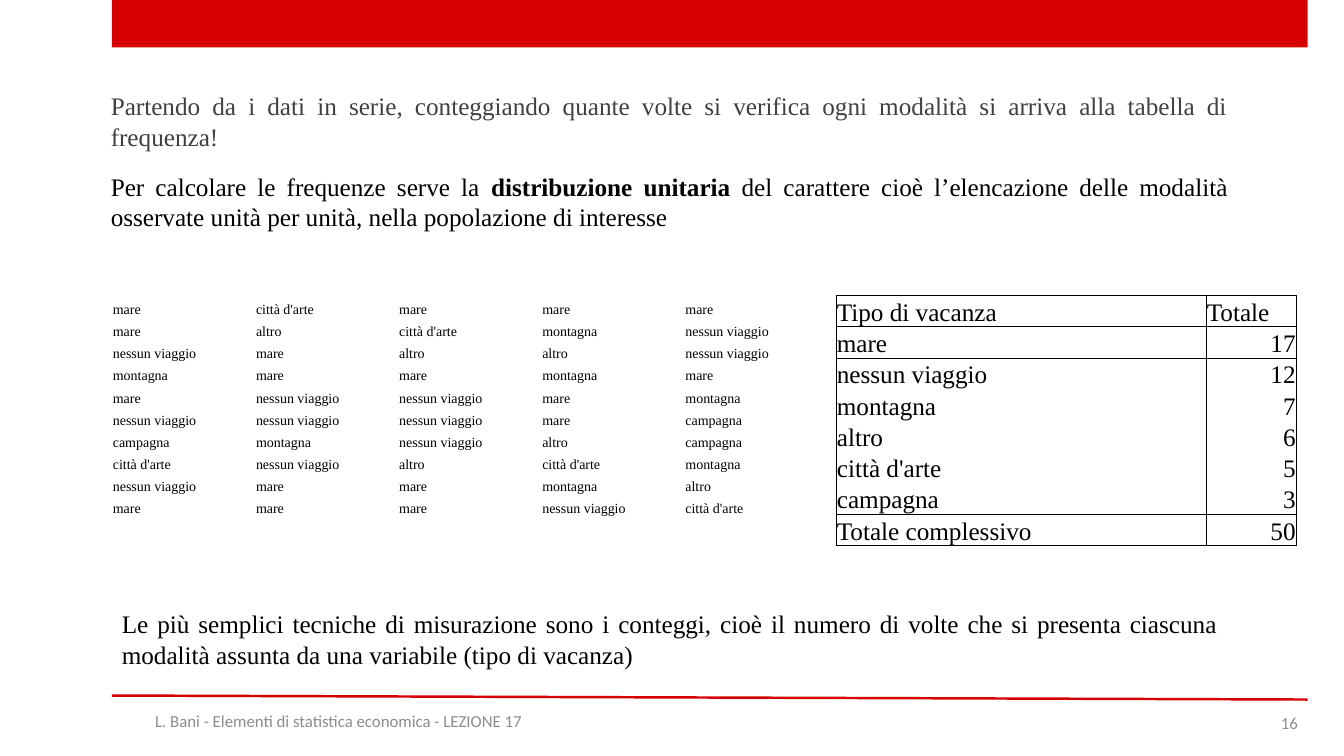
import lxml.etree
import pptx
import pptx.dml.color
import pptx.enum.shapes
import pptx.enum.text
import pptx.oxml.ns
import pptx.util

Inches = pptx.util.Inches
Pt = pptx.util.Pt
ALIGN = pptx.enum.text.PP_ALIGN
ANCHOR = pptx.enum.text.MSO_ANCHOR
qn = pptx.oxml.ns.qn

COLOURS = {"red": "D60000", "black": "000000", "dark": "404040", "grey": "8C8C8C"}
NO_STYLE_NO_GRID = "{2D5ABB26-0587-4C30-8999-92F81FD0307C}"
NO_TRIP = "nessun viaggio"

HOLIDAYS = [
    ["mare", "città d'arte", "mare", "mare", "mare"],
    ["mare", "altro", "città d'arte", "montagna", NO_TRIP],
    [NO_TRIP, "mare", "altro", "altro", NO_TRIP],
    ["montagna", "mare", "mare", "montagna", "mare"],
    ["mare", NO_TRIP, NO_TRIP, "mare", "montagna"],
    [NO_TRIP, NO_TRIP, NO_TRIP, "mare", "campagna"],
    ["campagna", "montagna", NO_TRIP, "altro", "campagna"],
    ["città d'arte", NO_TRIP, "altro", "città d'arte", "montagna"],
    [NO_TRIP, "mare", "mare", "montagna", "altro"],
    ["mare", "mare", "mare", NO_TRIP, "città d'arte"],
]
FREQUENCIES = [
    ["Tipo di vacanza", "Totale"],
    ["mare", "17"],
    [NO_TRIP, "12"],
    ["montagna", "7"],
    ["altro", "6"],
    ["città d'arte", "5"],
    ["campagna", "3"],
    ["Totale complessivo", "50"],
]


def colour(name):
    return pptx.dml.color.RGBColor.from_string(COLOURS[name])


def write_text(frame, text, size=18, font="Times New Roman", color="black",
               align=ALIGN.LEFT, bold_words=""):
    """Fill the first paragraph of a frame, with bold_words set in bold."""
    paragraph = frame.paragraphs[0]
    paragraph.alignment = align
    if not text:
        # An empty cell keeps its row low only if its end mark is small too.
        lxml.etree.SubElement(paragraph._p, qn("a:endParaRPr"), sz=str(size * 100))
    parts = text.partition(bold_words) if bold_words else [text]
    for part in filter(None, parts):
        run = paragraph.add_run()
        run.text = part
        run.font.name = font
        run.font.size = Pt(size)
        run.font.bold = part == bold_words
        run.font.color.rgb = colour(color)


def add_border(cell, side):
    line = lxml.etree.SubElement(cell._tc.get_or_add_tcPr(), qn(f"a:ln{side}"),
                                 w=str(Pt(0.5)))
    fill = lxml.etree.SubElement(line, qn("a:solidFill"))
    lxml.etree.SubElement(fill, qn("a:srgbClr"), val=COLOURS["black"])


class SlideBuilder:
    def __init__(self, slide):
        self.slide = slide

    def bar(self, left, top, width, height):
        shape = self.slide.shapes.add_shape(
            pptx.enum.shapes.MSO_SHAPE.RECTANGLE,
            Inches(left), Inches(top), Inches(width), Inches(height))
        shape.shadow.inherit = False
        shape.fill.solid()
        shape.fill.fore_color.rgb = colour("red")
        shape.line.fill.background()

    def line(self, x1, y1, x2, y2):
        connector = self.slide.shapes.add_connector(
            pptx.enum.shapes.MSO_CONNECTOR.STRAIGHT,
            Inches(x1), Inches(y1), Inches(x2), Inches(y2))
        connector.line.color.rgb = colour("red")
        connector.line.width = Pt(1.75)
        lxml.etree.SubElement(connector._element.spPr, qn("a:effectLst"))

    def text_box(self, left, top, width, height, text, **style):
        box = self.slide.shapes.add_textbox(
            Inches(left), Inches(top), Inches(width), Inches(height))
        box.text_frame.word_wrap = True
        write_text(box.text_frame, text, **style)
        return box.text_frame

    def body(self, left, top, width, text, **style):
        frame = self.text_box(left, top, width, 0.71, text,
                              align=ALIGN.JUSTIFY, **style)
        frame.auto_size = pptx.enum.text.MSO_AUTO_SIZE.SHAPE_TO_FIT_TEXT

    def footer(self, left, top, width, text, align):
        frame = self.text_box(left, top, width, 0.4, text, size=12,
                              font="Calibri", color="grey", align=align)
        frame.vertical_anchor = ANCHOR.MIDDLE

    def table(self, left, top, column_widths, row_height, row_count):
        graphic = self.slide.shapes.add_table(
            row_count, len(column_widths), Inches(left), Inches(top),
            Inches(sum(column_widths)), Inches(row_height * row_count))
        table = graphic.table
        table.first_row = table.horz_banding = False
        table._tbl.tblPr.find(qn("a:tableStyleId")).text = NO_STYLE_NO_GRID
        for column, width in zip(table.columns, column_widths):
            column.width = Inches(width)
        for row in table.rows:
            row.height = Inches(row_height)
        return table

    def cell(self, cell, text, borders="", **style):
        cell.margin_left = cell.margin_right = cell.margin_top = Inches(0.01)
        cell.margin_bottom = 0
        cell.vertical_anchor = ANCHOR.BOTTOM
        for side in borders:
            add_border(cell, side)
        cell.fill.background()
        write_text(cell.text_frame, text, **style)

    def holiday_table(self):
        """List the answers in columns parted by narrow empty ones."""
        widths = [1.18, 0.24] * 4 + [1.18]
        table = self.table(1.11, 2.93, widths, 0.22, len(HOLIDAYS))
        for r, answers in enumerate(HOLIDAYS):
            for c in range(len(widths)):
                answer = "" if c % 2 else answers[c // 2]
                self.cell(table.cell(r, c), answer, size=10)
            for c in range(0, len(widths) - 1, 2):
                if answers[c // 2] == NO_TRIP:
                    table.cell(r, c).merge(table.cell(r, c + 1))

    def frequency_table(self):
        """Box the header, the block of counts and the total."""
        last = len(FREQUENCIES) - 1
        table = self.table(8.29, 2.93, [3.67, 0.9], 0.31, len(FREQUENCIES))
        for r, values in enumerate(FREQUENCIES):
            borders = "LR"
            borders += "T" if r in (0, 1, last) else ""
            borders += "B" if r in (0, last - 1, last) else ""
            for c, value in enumerate(values):
                align = ALIGN.RIGHT if value.isdigit() else ALIGN.LEFT
                self.cell(table.cell(r, c), value, borders, align=align)


def main():
    presentation = pptx.Presentation()
    presentation.slide_width = Inches(13.33)
    presentation.slide_height = Inches(7.5)
    blank_layout = presentation.slide_layouts[6]
    builder = SlideBuilder(presentation.slides.add_slide(blank_layout))

    builder.bar(1.11, 0, 11.86, 0.47)
    builder.line(1.11, 6.9, 12.97, 6.94)
    builder.footer(1.11, 6.95, 4.5,
                   "L. Bani - Elementi di statistica economica - LEZIONE 17",
                   ALIGN.CENTER)
    builder.footer(9.97, 6.97, 3, "16", ALIGN.RIGHT)
    builder.body(1, 0.85, 11.28,
                 "Partendo da i dati in serie, conteggiando quante volte si verifica "
                 "ogni modalità si arriva alla tabella di frequenza!", color="dark")
    builder.holiday_table()
    builder.body(1, 1.65, 11.28,
                 "Per calcolare le frequenze serve la distribuzione unitaria del "
                 "carattere cioè l’elencazione delle modalità osservate unità per "
                 "unità, nella popolazione di interesse",
                 bold_words="distribuzione unitaria")
    builder.body(1.11, 5.99, 11.07,
                 "Le più semplici tecniche di misurazione sono i conteggi, cioè il "
                 "numero di volte che si presenta ciascuna modalità assunta da una "
                 "variabile (tipo di vacanza)")
    builder.frequency_table()
    presentation.save("out.pptx")


if __name__ == "__main__":
    main()
